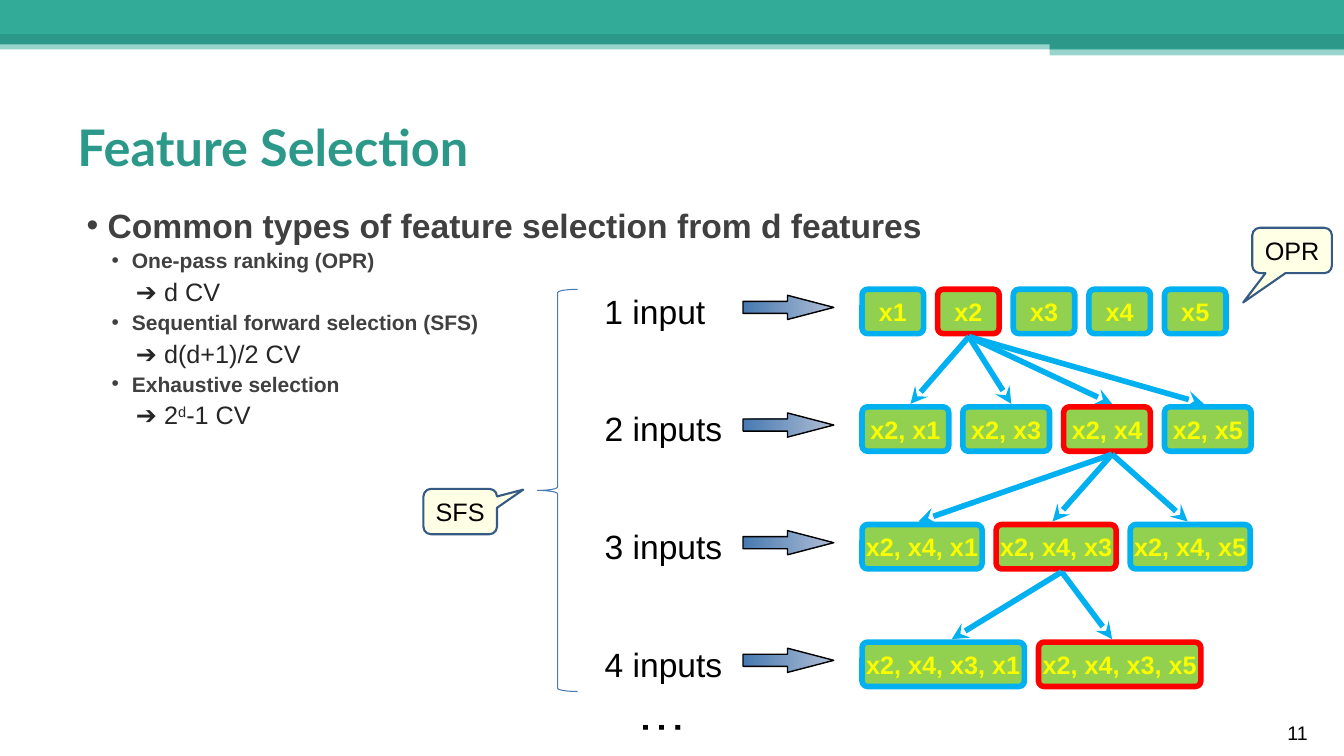
from lxml.etree import SubElement
from pptx import Presentation
from pptx.dml.color import RGBColor
from pptx.enum.shapes import MSO_CONNECTOR, MSO_SHAPE
from pptx.enum.text import MSO_ANCHOR, MSO_AUTO_SIZE, PP_ALIGN
from pptx.oxml.ns import qn
from pptx.util import Inches, Pt

# The page is a grid of 13.33 columns by 7.5 rows, one inch each
COLUMNS, ROWS = 13.33, 7.5
TEAL, DARK_TEAL, GREY = "32AB99", "2C9889", "404040"
SKY, RED, GREEN, YELLOW = "00B0F0", "FF0000", "92D050", "FAFD00"
BLACK, STEEL = "000000", "477AB1"

# Feature tree: box left edge, spacing between boxes, and rows
TREE_LEFT, TREE_TOP, TREE_PITCH = 8.55, 2.87, 1.167
BOX_HEIGHT, BOX_GAP = 0.44, 0.14
# Label, box width, subsets, chosen index, arrow start, arrow ends in the next row
LEVELS = [
    ("1 input", 0.61, ["x1", "x2", "x3", "x4", "x5"], 1, 9.61, [9.03, 10.03, 11.03, 11.94]),
    ("2 inputs", 0.86, ["x2, x1", "x2, x3", "x2, x4", "x2, x5"], 2, 11.03, [9.11, 10.44, 11.78]),
    ("3 inputs", 1.19, ["x2, x4, x1", "x2, x4, x3", "x2, x4, x5"], 1, 10.53, [9.44, 11.03]),
    ("4 inputs", 1.61, ["x2, x4, x3, x1", "x2, x4, x3, x5"], 1, 0, []),
]
METHODS = [
    ("One-pass ranking (OPR)", [("➔ d CV", 0)]),
    ("Sequential forward selection (SFS)", [("➔ d(d+1)/2 CV", 0)]),
    ("Exhaustive selection", [("➔ 2", 0), ("d", 30000), ("-1 CV", 0)]),
]


def color(code):
    return RGBColor.from_string(code)


def grid(*cells):
    return [Inches(cell) for cell in cells]


def add_span(para, text, size, code, bold=False, font="Arial"):
    span = para.add_run()
    span.text = text
    span.font.size, span.font.bold, span.font.name = Pt(size), bold, font
    span.font.color.rgb = color(code)
    return span


def add_box(page, at, anchor=MSO_ANCHOR.TOP, wrap=True):
    box = page.shapes.add_textbox(*grid(*at))
    box.text_frame.word_wrap = wrap
    box.text_frame.vertical_anchor = anchor
    return box


def add_shape(page, kind, at, fill=None, line=None, weight=1, adjust=(), alpha=None):
    shape = page.shapes.add_shape(kind, *grid(*at))
    shape.shadow.inherit = False
    for index, value in enumerate(adjust):
        shape.adjustments[index] = value
    if fill:
        shape.fill.solid()
        shape.fill.fore_color.rgb = color(fill)
    else:
        shape.fill.background()
    if alpha:
        tint = shape.fill._xPr.find(qn("a:solidFill"))[0]
        SubElement(tint, qn("a:alpha")).set("val", str(alpha * 1000))
    if line:
        shape.line.color.rgb = color(line)
        shape.line.width = Pt(weight)
    else:
        shape.line.fill.background()
    return shape


def write_centered(shape, text, code, bold=False):
    frame = shape.text_frame
    frame.word_wrap = False
    frame.vertical_anchor = MSO_ANCHOR.MIDDLE
    frame.paragraphs[0].alignment = PP_ALIGN.CENTER
    add_span(frame.paragraphs[0], text, 18, code, bold)


def add_arrow(page, start, end):
    arrow = page.shapes.add_connector(MSO_CONNECTOR.STRAIGHT, *grid(*start, *end))
    arrow.line.color.rgb = color(SKY)
    arrow.line.width = Pt(4)
    SubElement(arrow.line._get_or_add_ln(), qn("a:tailEnd")).set("type", "stealth")
    SubElement(arrow._element.spPr, qn("a:effectLst"))


def add_block_arrow(page, top):
    arrow = add_shape(page, MSO_SHAPE.RIGHT_ARROW, (7.37, top, 0.9, 0.24),
                      line=BLACK, adjust=(0.5, 1.912))
    arrow.fill.gradient()
    arrow.fill.gradient_angle = 0
    for stop, code, position in zip(arrow.fill.gradient_stops, (STEEL, "B1BED5"), (0, 1)):
        stop.color.rgb = color(code)
        stop.position = position


def add_label(page, at, lines, spacing, bold=False):
    box = add_box(page, at, wrap=False)
    frame = box.text_frame
    frame.auto_size = MSO_AUTO_SIZE.SHAPE_TO_FIT_TEXT
    for index, line in enumerate(lines):
        para = frame.add_paragraph() if index else frame.paragraphs[0]
        para.alignment = PP_ALIGN.CENTER
        para.line_spacing = spacing
        add_span(para, line, 24, BLACK, bold)
    return box


def add_callout(page, at, text, pointer):
    callout = add_shape(page, MSO_SHAPE.ROUNDED_RECTANGULAR_CALLOUT, at, "FFFFCC",
                        "355A83", 1.5, (*pointer, 0.167), alpha=50)
    write_centered(callout, text, BLACK)


def set_indent(para, level, left, hanging, bullet=False):
    para.level = level
    props = para._p.get_or_add_pPr()
    props.set("marL", str(Inches(left)))
    props.set("indent", str(Inches(hanging)))
    if bullet:
        tint = SubElement(SubElement(props, qn("a:buClr")), qn("a:srgbClr"))
        tint.set("val", GREY)
        SubElement(props, qn("a:buFont")).set("typeface", "Arial")
        SubElement(props, qn("a:buChar")).set("char", "•")


def add_banner(page):
    tab = COLUMNS - 2.92
    for at, code, alpha in [
        ((0, 0.4, COLUMNS, 0.09), TEAL, 50),
        ((0, 0, COLUMNS, 0.34), TEAL, None),
        ((0, 0.34, COLUMNS, 0.1), DARK_TEAL, None),
        ((tab, 0.39, 2.92, 0.1), DARK_TEAL, None),
        ((tab, 0.48, 2.92, 0.07), TEAL, 50),
    ]:
        add_shape(page, MSO_SHAPE.RECTANGLE, at, code, alpha=alpha)


def add_outline(page):
    frame = add_box(page, (0.67, 1.98, 12, 4.81)).text_frame
    heading = frame.paragraphs[0]
    set_indent(heading, 0, 0.3, -0.21, bullet=True)
    add_span(heading, "Common types of feature selection from d features", 24, GREY, True)
    for method, cost in METHODS:
        para = frame.add_paragraph()
        para.space_before = Pt(2.2)
        set_indent(para, 1, 0.54, -0.2, bullet=True)
        add_span(para, method, 15, GREY, True)
        para = frame.add_paragraph()
        para.space_before = Pt(2.2)
        set_indent(para, 2, 0.58, 0)
        for text, baseline in cost:
            span = add_span(para, text, 18, "262626")
            if baseline:
                span.font._element.set("baseline", str(baseline))


def add_tree(page):
    for depth, (label, width, subsets, chosen, start, ends) in enumerate(LEVELS):
        top = TREE_TOP + depth * TREE_PITCH
        for index, subset in enumerate(subsets):
            left = TREE_LEFT + index * (width + BOX_GAP)
            box = add_shape(page, MSO_SHAPE.ROUNDED_RECTANGLE, (left, top, width, BOX_HEIGHT),
                            GREEN, RED if index == chosen else SKY, 4, (0.125,))
            write_centered(box, subset, YELLOW, bold=True)
        for end in ends:
            add_arrow(page, (start, top + BOX_HEIGHT + 0.03), (end, top + TREE_PITCH - 0.03))
        label_width = 1.38 if depth else 1.21
        add_label(page, (5.89, top + 0.09, label_width, 0.38), [label], 0.65)
        add_block_arrow(page, top + 0.06)


def main():
    deck = Presentation()
    deck.slide_width, deck.slide_height = grid(COLUMNS, ROWS)
    page = deck.slides.add_slide(deck.slide_layouts[6])

    # Banner, title and outline
    add_banner(page)
    title = add_box(page, (0.67, 1.02, 12, 0.86), MSO_ANCHOR.MIDDLE)
    add_span(title.text_frame.paragraphs[0], "Feature Selection", 36, DARK_TEAL, True, "Lato")
    add_outline(page)

    # Search tree with its continuation dots, brace and callouts
    add_tree(page)
    dots = add_label(page, (6.41, 6.91, 0.3, 0.62), [".", ".", "."], 0.4, bold=True)
    dots.rotation = 270
    add_shape(page, MSO_SHAPE.LEFT_BRACE, (5.33, 2.87, 0.4, 3.99), line=STEEL, weight=0.75)
    add_callout(page, (4.2, 4.85, 0.73, 0.45), "SFS", (0.856, -0.483))
    add_callout(page, (12.42, 2.26, 0.79, 0.45), "OPR", (-0.615, 1.147))

    # Page number
    number = add_box(page, (12.67, 7.1, 0.54, 0.3))
    add_span(number.text_frame.paragraphs[0], "11", 14, BLACK)

    deck.save("out.pptx")


if __name__ == "__main__":
    main()
